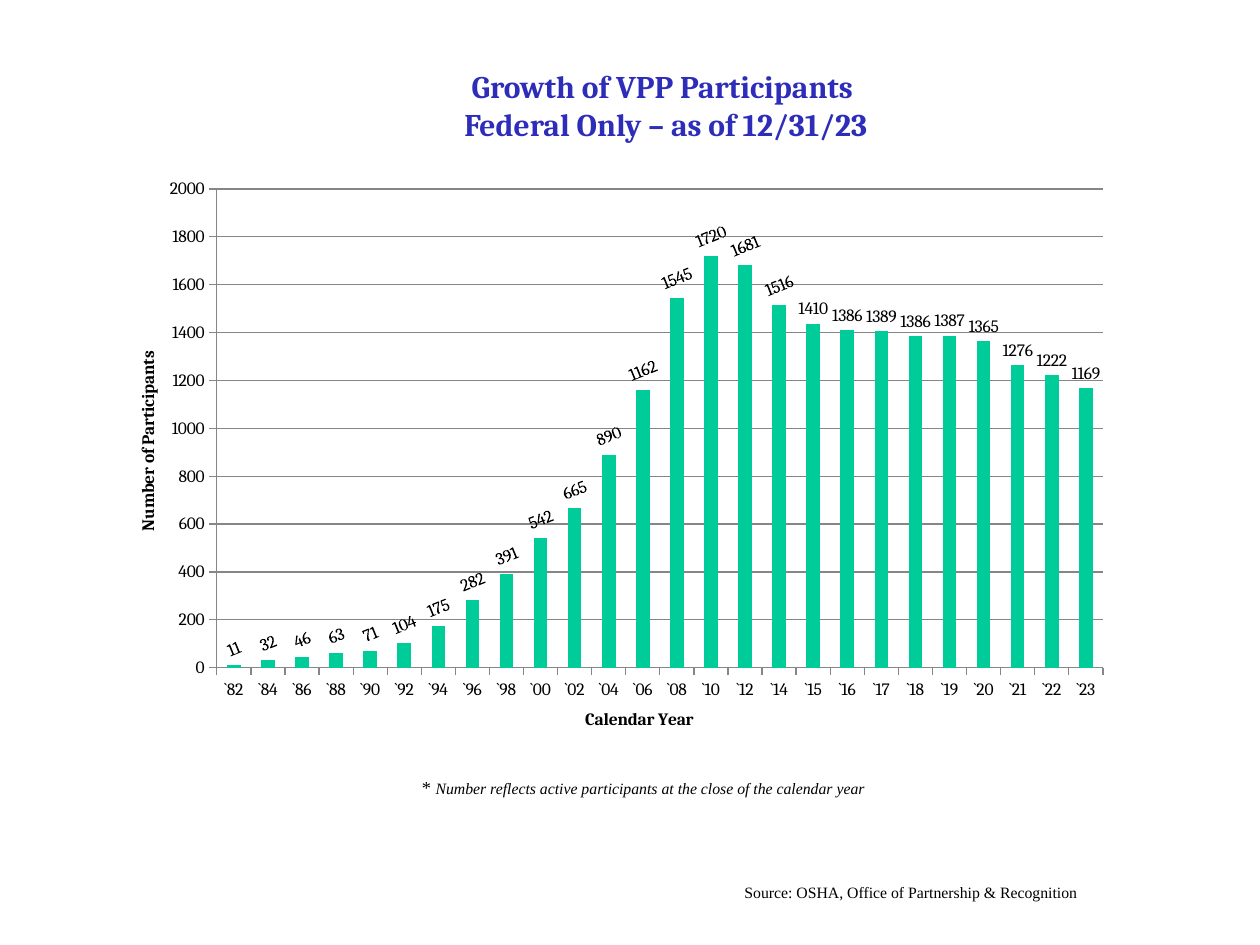
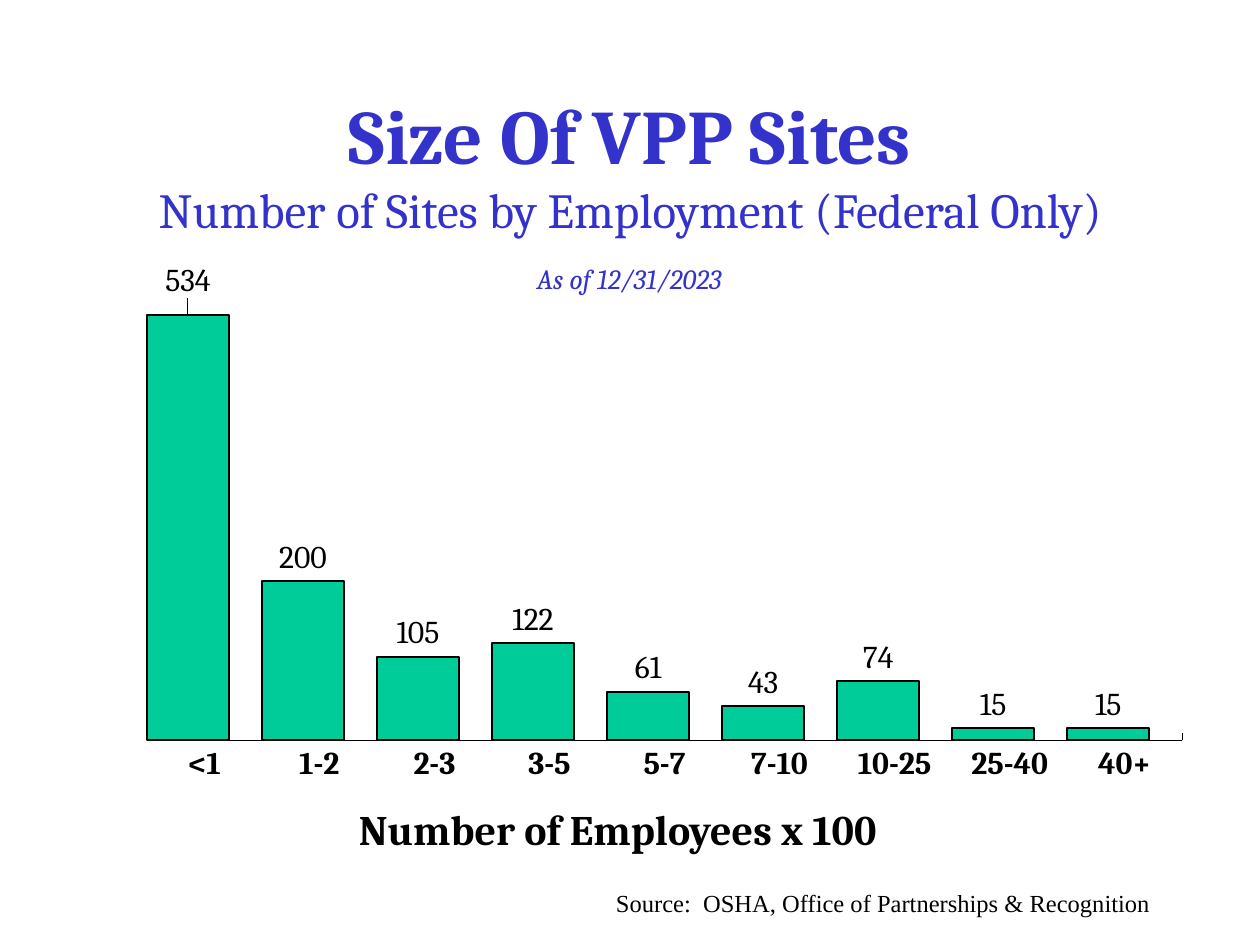
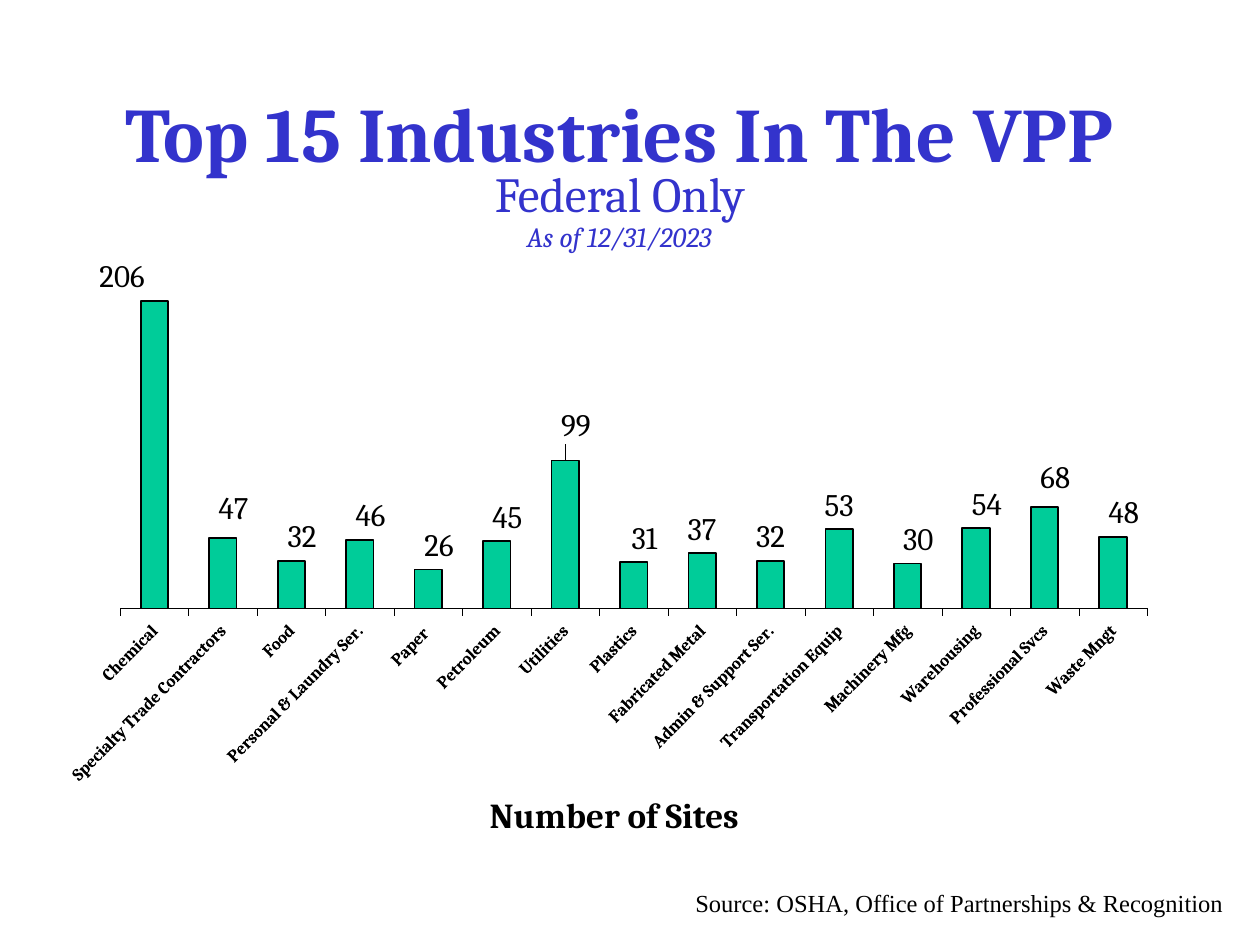
from dataclasses import dataclass, field
from typing import Any, Optional

from lxml import etree
from pptx import Presentation
from pptx.chart.data import CategoryChartData
from pptx.dml.color import RGBColor
from pptx.enum.chart import XL_CHART_TYPE, XL_LABEL_POSITION as LabelPos
from pptx.enum.chart import XL_TICK_LABEL_POSITION as TickLabelPos, XL_TICK_MARK as TickMark
from pptx.enum.text import MSO_ANCHOR as Anchor, MSO_AUTO_SIZE as AutoSize, PP_ALIGN as Align
from pptx.oxml.ns import qn
from pptx.util import Inches, Pt

COLORS = {
    "black": "000000",
    "title": "3333CC",
    "growth_title": "2D2DB9",
    "bar": "00CC99",
    "series_2": "3333CC",
    "series_3": "CCCCFF",
    "grid": "868686",
}
HEADING_FONT = "Cambria"
NOTE_FONT = "Times New Roman"
AS_OF = "As of 12/31/2023"

Box = tuple[float, float, float, float]


@dataclass(frozen=True)
class ColumnChart:
    box: Box
    plot_area: Box
    categories: list[str]
    values: list[int]
    maximum: int
    size: float
    bold: bool = False
    gap: int = 150
    overlap: int = 0
    outlined: bool = True
    tick: Any = TickMark.OUTSIDE
    empty_series: dict[str, str] = field(default_factory=dict)
    label_shifts: dict[int, tuple[float, float]] = field(default_factory=dict)


def rgb(color: str) -> RGBColor:
    return RGBColor.from_string(COLORS[color])


def set_font(font, *, size: float, name: str = HEADING_FONT, color: str = "black",
             bold: bool = False, italic: bool = False) -> None:
    font.name = name
    font.size = Pt(size)
    font.bold = bold
    font.italic = italic
    font.color.rgb = rgb(color)


def add_run(paragraph, text: str, **style) -> None:
    run = paragraph.add_run()
    run.text = text
    set_font(run.font, **style)


def place(shape, box: Box) -> None:
    shape.left, shape.top, shape.width, shape.height = map(Inches, box)


def add_text(slide, text: str, box: Box, *, align=Align.LEFT, anchor=Anchor.TOP, **style):
    """Add a one-paragraph text box and return its paragraph."""
    frame = slide.shapes.add_textbox(*map(Inches, box)).text_frame
    frame.word_wrap = True
    frame.vertical_anchor = anchor
    paragraph = frame.paragraphs[0]
    paragraph.alignment = align
    add_run(paragraph, text, **style)
    return paragraph


def add_titled_slide(prs, box: Box, lines: list[tuple[str, dict]]):
    slide = prs.slides.add_slide(prs.slide_layouts[5])
    title = slide.shapes.title
    place(title, box)
    frame = title.text_frame
    frame.auto_size = AutoSize.NONE
    frame.vertical_anchor = Anchor.MIDDLE
    for index, (text, style) in enumerate(lines):
        paragraph = frame.add_paragraph() if index else frame.paragraphs[0]
        paragraph.alignment = Align.CENTER
        add_run(paragraph, text, **style)
    return slide


def add_as_of(slide, left: float, top: float) -> None:
    add_text(slide, AS_OF, (left, top, 2.83, 0.75), align=Align.CENTER,
             anchor=Anchor.MIDDLE, size=16, color="title", italic=True)


def add_source(slide, text: str, box: Box, size: float = 14) -> None:
    add_text(slide, text, box, name=NOTE_FONT, size=size)


def set_layout(parent, index: int, **settings) -> None:
    """Give a chart part a manual layout as its child number index."""
    for old in parent.findall(qn("c:layout")):
        parent.remove(old)
    layout = etree.Element(qn("c:layout"))
    manual = etree.SubElement(layout, qn("c:manualLayout"))
    for key, value in settings.items():
        etree.SubElement(manual, qn(f"c:{key}")).set("val", str(value))
    parent.insert(index, layout)


def rotate_text(parent, degrees: int) -> None:
    body = parent.find(qn("c:txPr")).find(qn("a:bodyPr"))
    body.set("rot", str(degrees * 60000))
    body.set("vert", "horz")


def set_line(line, color: str, width: float) -> None:
    line.color.rgb = rgb(color)
    line.width = Pt(width)


def add_axis_title(axis, text: str, x: float, y: float) -> None:
    paragraph = axis.axis_title.text_frame.paragraphs[0]
    add_run(paragraph, text, size=10, bold=True)
    set_layout(axis.axis_title._element, 1, xMode="edge", yMode="edge", x=x, y=y)


def add_column_chart(slide, design: ColumnChart):
    data = CategoryChartData()
    data.categories = design.categories
    data.add_series("Series 1", design.values)
    for name in design.empty_series:
        data.add_series(name, [None] * len(design.categories))
    chart = slide.shapes.add_chart(
        XL_CHART_TYPE.COLUMN_CLUSTERED, *map(Inches, design.box), data).chart
    chart.has_title = False
    chart.has_legend = False
    set_font(chart.font, size=design.size, bold=design.bold)

    x, y, w, h = design.plot_area
    set_layout(chart._chartSpace.chart.plotArea, 0, layoutTarget="inner",
               xMode="edge", yMode="edge", x=x, y=y, w=w, h=h)

    plot = chart.plots[0]
    plot.vary_by_categories = False
    plot.gap_width = design.gap
    plot.overlap = design.overlap
    for series, color in zip(plot.series, ["bar", *design.empty_series.values()]):
        series.format.fill.solid()
        series.format.fill.fore_color.rgb = rgb(color)
        if design.outlined:
            set_line(series.format.line, "black", 1)

    counts = plot.series[0]
    labels = counts.data_labels
    labels.show_value = True
    labels.position = LabelPos.OUTSIDE_END
    set_font(labels.font, size=design.size)
    for index, (dx, dy) in design.label_shifts.items():
        label = counts.points[index].data_label
        set_font(label.font, size=design.size)
        label.position = LabelPos.OUTSIDE_END
        set_layout(label._dLbl, 1, x=dx, y=dy)

    chart.category_axis.major_tick_mark = design.tick
    set_line(chart.category_axis.format.line, "black", 0.25)
    values = chart.value_axis
    values.minimum_scale = 0
    values.maximum_scale = design.maximum
    values.has_major_gridlines = False
    return chart


def build_growth_slide(prs) -> None:
    style = dict(size=18, color="growth_title", bold=True)
    slide = add_titled_slide(prs, (2.82, 0.42, 4.93, 0.83), [
        ("Growth of VPP Participants ", style),
        ("Federal Only – as of 12/31/23", style),
    ])
    years = [*range(1982, 2015, 2), *range(2015, 2024)]
    chart = add_column_chart(slide, ColumnChart(
        box=(1, 1.25, 7.92, 4.58),
        plot_area=(0.091, 0.055, 0.888, 0.836),
        categories=[f"`{year % 100:02d}" for year in years],
        values=[11, 32, 46, 63, 71, 104, 175, 282, 391, 542, 665, 890, 1162,
                1545, 1720, 1681, 1516, 1437, 1410, 1407, 1386, 1387, 1365,
                1265, 1222, 1169],
        maximum=2000, size=10, outlined=False,
    ))
    points = chart.plots[0].series[0].points
    yearly_labels = [1410, 1386, 1389, 1386, 1387, 1365, 1276, 1222, 1169]
    first_yearly = years.index(2015)
    for index in range(first_yearly):
        label = points[index].data_label
        set_font(label.font, size=10)
        label.position = LabelPos.OUTSIDE_END
        rotate_text(label._dLbl, -22)
    for index, count in enumerate(yearly_labels, first_yearly):
        label = points[index].data_label
        add_run(label.text_frame.paragraphs[0], str(count), size=10)
        label.position = LabelPos.OUTSIDE_END

    counts = chart.value_axis
    counts.major_unit = 200
    counts.major_tick_mark = TickMark.OUTSIDE
    counts.has_major_gridlines = True
    for part in (counts, counts.major_gridlines, chart.category_axis):
        set_line(part.format.line, "grid", 0.75)
    add_axis_title(chart.category_axis, "Calendar Year", 0.457, 0.955)
    add_axis_title(counts, "Number of Participants", 0.007, 0.335)

    note = add_text(slide, "* ", (3.25, 6.11, 4, 0.28), name=NOTE_FONT, size=10.5)
    add_run(note, "Number reflects active participants at the close of the calendar year",
            name=NOTE_FONT, size=9, italic=True)
    add_source(slide, "Source: OSHA, Office of Partnership & Recognition",
               (5.81, 6.96, 2.94, 0.25), size=9)


def build_size_slide(prs) -> None:
    slide = add_titled_slide(prs, (0.75, 0.67, 8.5, 1.25), [
        ("Size Of VPP Sites", dict(size=44, color="title", bold=True)),
        ("Number of Sites by Employment (Federal Only)", dict(size=28, color="title")),
    ])
    chart = add_column_chart(slide, ColumnChart(
        box=(0.98, 2.08, 8.42, 4.31),
        plot_area=(0.022, 0, 0.976, 0.881),
        categories=["<1", "1-2", "2-3", "3-5", "5-7", "7-10", "10-25", "25-40", "40+"],
        values=[534, 200, 105, 122, 61, 43, 74, 15, 15],
        maximum=600, size=18.1, bold=True, gap=0, overlap=80, tick=TickMark.INSIDE,
        empty_series={"Series 2": "series_2", "Series 3": "series_3"},
        label_shifts={0: (0, -0.02)},
    ))
    chart.value_axis.major_tick_mark = TickMark.NONE
    chart.value_axis.tick_label_position = TickLabelPos.NONE
    chart.value_axis.format.line.fill.background()
    add_as_of(slide, 3.58, 1.83)
    add_text(slide, "Number of Employees x 100", (2.75, 6.33, 4.6, 0.5), size=24, bold=True)
    add_source(slide, "Source:  OSHA, Office of Partnerships & Recognition",
               (4.79, 7, 5.12, 0.33))


def build_industries_slide(prs) -> None:
    slide = add_titled_slide(prs, (0.67, 0.42, 8.5, 1.25), [
        ("Top 15 Industries In The VPP", dict(size=44, color="title", bold=True)),
    ])
    add_text(slide, "Number of Sites", (3.72, 6.25, 2.31, 0.77),
             align=Align.CENTER, size=20, bold=True)
    sites = {
        "Chemical": 206, "Specialty Trade Contractors": 47, "Food": 32,
        "Personal & Laundry Ser.": 46, "Paper ": 26, "Petroleum": 45,
        "Utilities": 99, "Plastics": 31, "Fabricated Metal": 37,
        "Admin & Support Ser.": 32, "Transportation Equip": 53,
        "Machinery Mfg": 30, "Warehousing": 54, "Professional Svcs": 68,
        "Waste Mngt": 48,
    }
    shifted_right = {index: (0.01, 0) for index in (2, 3, 4, 5, 7, 11, 12, 14)}
    chart = add_column_chart(slide, ColumnChart(
        box=(0.54, 1.81, 8.66, 4.59),
        plot_area=(0.037, 0.012, 0.952, 0.646),
        categories=list(sites), values=list(sites.values()),
        maximum=250, size=17.9, bold=True,
        label_shifts={**shifted_right, 0: (-0.03, 0), 1: (0.01, -0.01),
                      6: (0.01, -0.02), 13: (0.01, -0.01)},
    ))
    chart.value_axis.visible = False
    industries = chart.category_axis
    industries.tick_label_position = TickLabelPos.LOW
    set_font(industries.tick_labels.font, size=10, bold=True)
    rotate_text(industries._element, -45)
    add_text(slide, "Federal Only", (3.83, 1.25, 2.38, 0.57), size=28, color="title")
    add_as_of(slide, 3.5, 1.5)
    add_source(slide, "Source: OSHA, Office of Partnerships & Recognition",
               (5.42, 7, 4.5, 0.33))


def main() -> None:
    prs = Presentation()
    prs.slide_width, prs.slide_height = Inches(10), Inches(7.5)
    build_growth_slide(prs)
    build_size_slide(prs)
    build_industries_slide(prs)
    prs.save("out.pptx")


if __name__ == "__main__":
    main()
